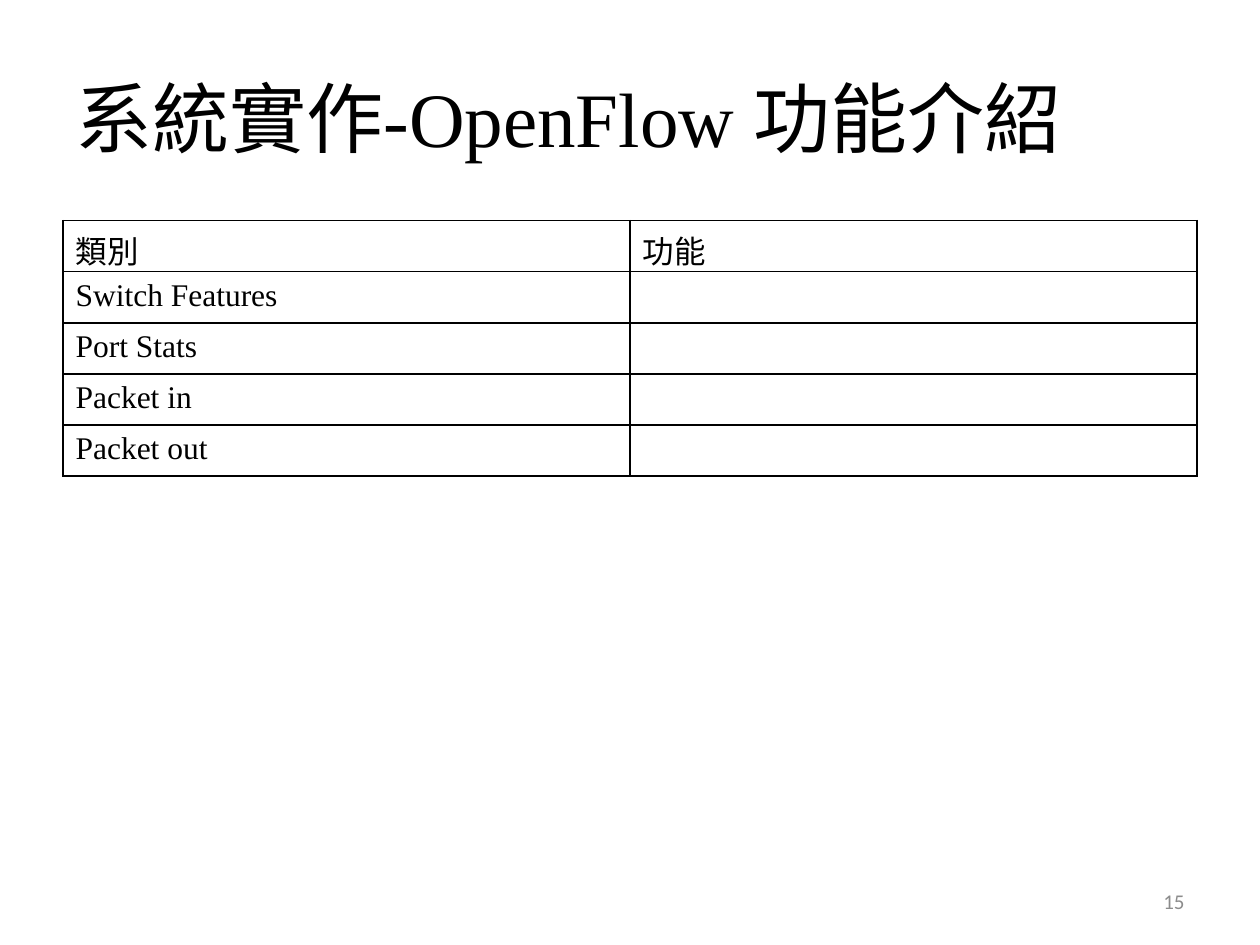
from lxml.etree import SubElement
from pptx import Presentation
from pptx.dml.color import RGBColor
from pptx.enum.text import MSO_ANCHOR, PP_ALIGN
from pptx.oxml.ns import qn
from pptx.util import Inches, Pt

COLORS = {"ink": "000000", "muted": "8C8C8C"}
LATIN, CJK, NUMBER = "Times New Roman", "Noto Sans CJK SC", "Calibri"
ROWS = [
    ("類別", "功能"),
    ("Switch Features", ""),
    ("Port Stats", ""),
    ("Packet in", ""),
    ("Packet out", ""),
]


def write(paragraph, text, size, font, color="ink"):
    """Add one run with its size, fonts and colour."""
    run = paragraph.add_run()
    run.text = text
    for name, value in {"size": Pt(size), "name": font}.items():
        setattr(run.font, name, value)
    run.font.color.rgb = RGBColor.from_string(COLORS[color])
    SubElement(run.font._element, qn("a:ea"), typeface=CJK)


def add_label(slide, box, text, size, font, color="ink", align=PP_ALIGN.LEFT):
    """Place a vertically centred line of text in the box."""
    frame = slide.shapes.add_textbox(*map(Inches, box)).text_frame
    for name, value in {"word_wrap": True, "vertical_anchor": MSO_ANCHOR.MIDDLE}.items():
        setattr(frame, name, value)
    paragraph = frame.paragraphs[0]
    paragraph.alignment = align
    write(paragraph, text, size, font, color)


def add_borders(cell, width=1):
    """Draw a solid line on all four sides of a cell."""
    properties = cell._tc.get_or_add_tcPr()
    for index, side in enumerate(("lnL", "lnR", "lnT", "lnB")):
        line = SubElement(properties, qn(f"a:{side}"), w=str(Pt(width)))
        fill = SubElement(line, qn("a:solidFill"))
        SubElement(fill, qn("a:srgbClr"), val=COLORS["ink"])
        properties.insert(index, line)


def add_feature_table(slide, box):
    """Fill the box with the table of categories and functions."""
    shape = slide.shapes.add_table(len(ROWS), len(ROWS[0]), *map(Inches, box))
    table = shape.table
    for name in ("first_row", "horz_banding"):
        setattr(table, name, False)
    for row_index, row in enumerate(ROWS):
        for column_index, text in enumerate(row):
            cell = table.cell(row_index, column_index)
            cell.fill.background()
            add_borders(cell)
            paragraph = cell.text_frame.paragraphs[0]
            paragraph.font.size = Pt(18)
            if text:
                write(paragraph, text, 18, LATIN if row_index else CJK)


def main():
    """Build the slide and save it."""
    presentation = Presentation()
    presentation.slide_width, presentation.slide_height = Inches(10), Inches(7.5)
    slide = presentation.slides.add_slide(presentation.slide_layouts[6])
    add_label(slide, (0.5, 0.3, 9, 1.25), "系統實作-OpenFlow 功能介紹", 44, LATIN)
    add_feature_table(slide, (0.5, 1.75, 9, 2.03))
    add_label(slide, (7.17, 6.95, 2.33, 0.4), "15", 12, NUMBER, "muted", PP_ALIGN.RIGHT)
    presentation.save("out.pptx")


if __name__ == "__main__":
    main()
